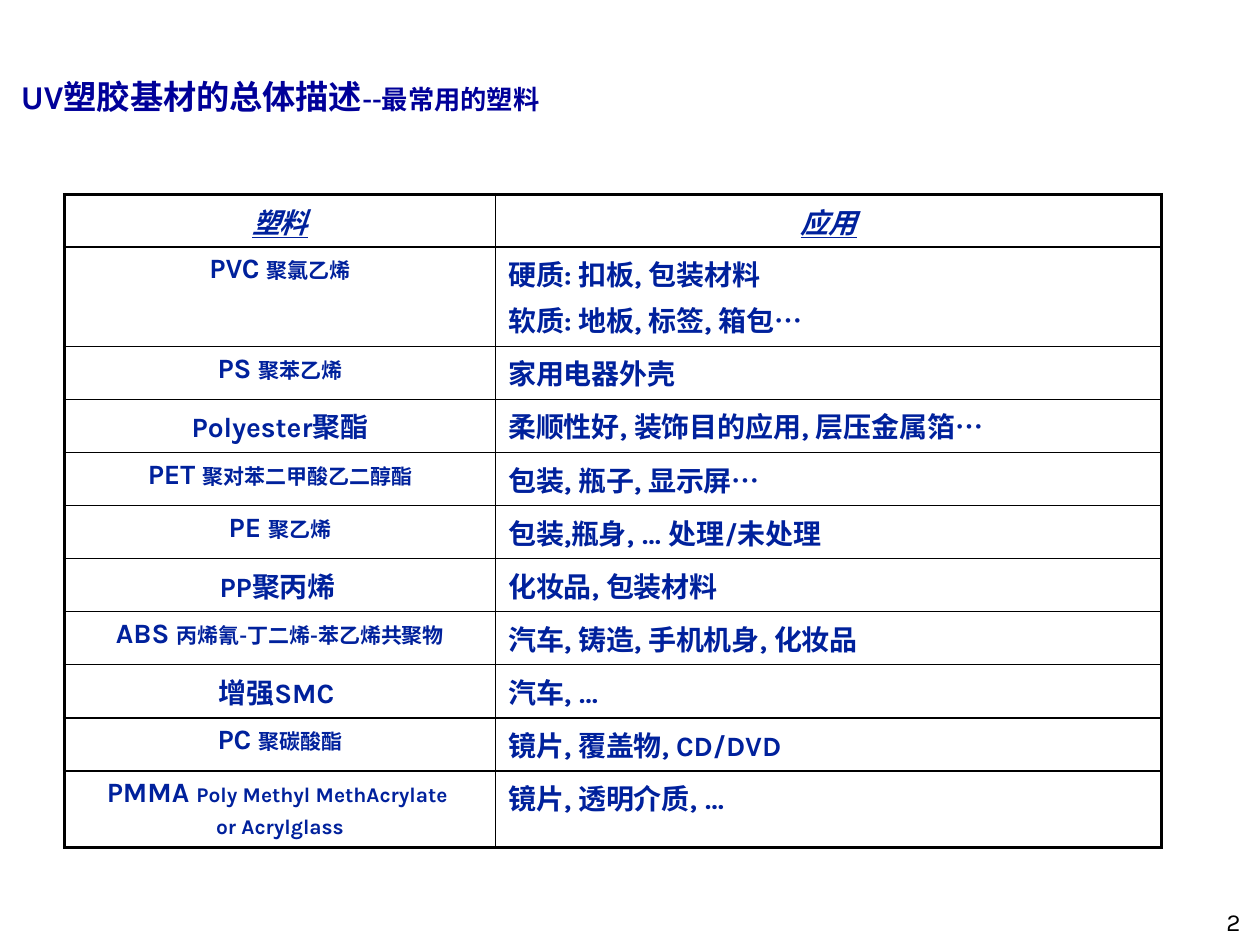
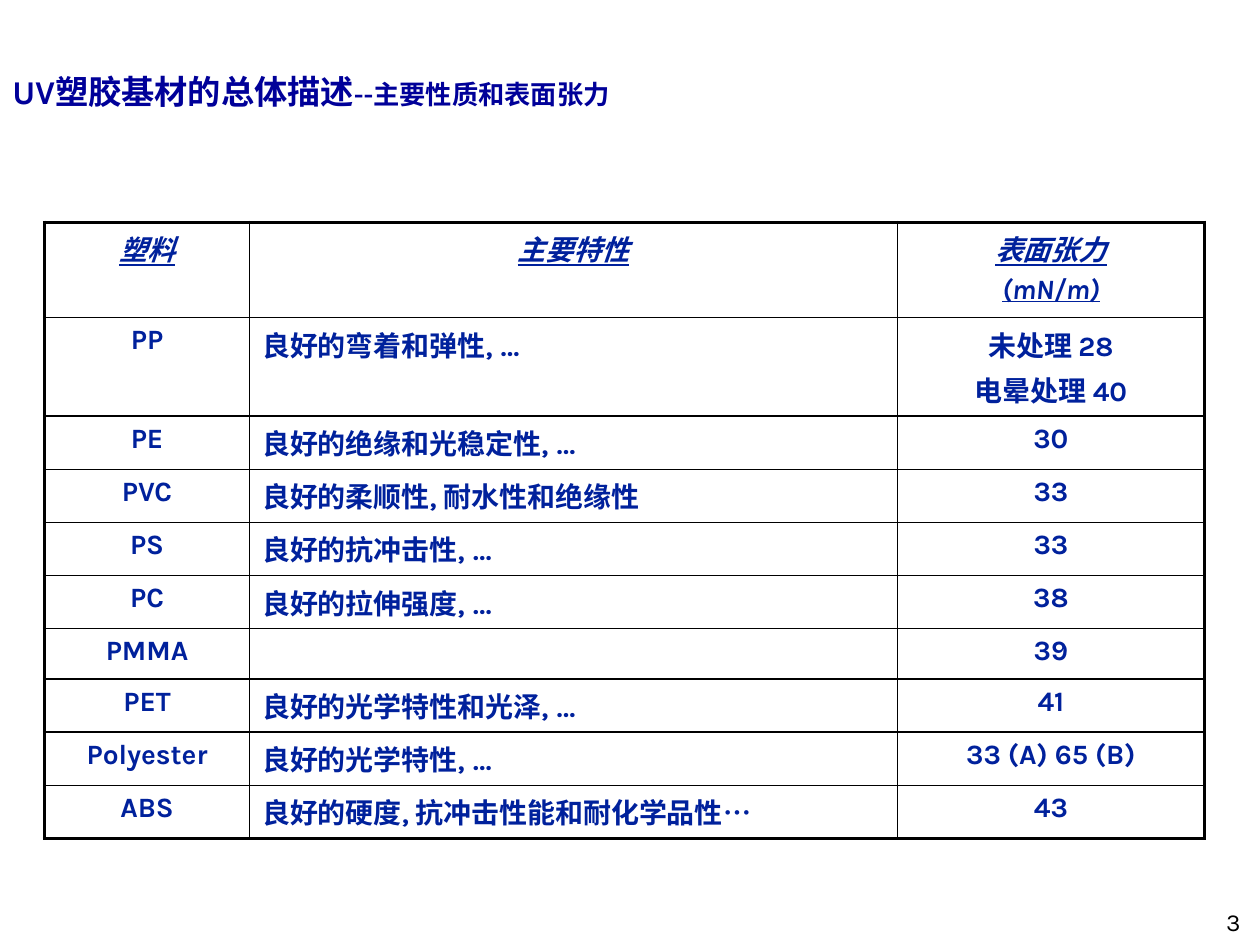
from lxml import etree
from pptx import Presentation
from pptx.dml.color import RGBColor
from pptx.enum import text
from pptx.oxml.ns import qn
from pptx.util import Cm, Pt

MAIN_FONT, DOTS_FONT = "Karla", "Roboto"
TITLE_COLOR, TABLE_COLOR, BLACK = "000099", "00219C", "000000"
INNER_LINE, OUTER_LINE = Pt(1), Pt(2.25)
BODY_SIZE, SMALL_SIZE = 16, 12
ROW_HEIGHT = 1.07
TITLE = "UV塑胶基材的总体描述"

# In a cell, "\n" starts a paragraph and "|" switches to the small size.
# "tall" holds the rows that differ from ROW_HEIGHT.
PAGES = [
    dict(
        number="2", subtitle="--最常用的塑料",
        title_height=1.63, title_indent=0.42,
        left=1.3, top=3.92, columns=[8.69, 13.43],
        special_heights={0: 1.06, 1: 2, 10: 1.54},
        rows=[
            ("塑料", "应用"),
            ("PVC |聚氯乙烯", "硬质: 扣板, 包装材料\n软质: 地板, 标签, 箱包…"),
            ("PS |聚苯乙烯", "家用电器外壳"),
            ("Polyester聚酯", "柔顺性好, 装饰目的应用, 层压金属箔…"),
            ("PET |聚对苯二甲酸乙二醇酯", "包装, 瓶子, 显示屏…"),
            ("PE |聚乙烯", "包装,瓶身, … 处理/未处理"),
            ("PP聚丙烯| ", "化妆品, 包装材料"),
            ("ABS |丙烯氰-丁二烯-苯乙烯共聚物", "汽车, 铸造, 手机机身, 化妆品"),
            ("增强SMC ", "汽车, …"),
            ("PC |聚碳酸酯", "镜片, 覆盖物, CD/DVD"),
            ("PMMA |Poly Methyl MethAcrylate \n|or Acrylglass", "镜片, 透明介质, …"),
        ],
    ),
    dict(
        number="3", subtitle="--主要性质和表面张力",
        title_height=1.42, title_indent=0.25,
        left=0.9, top=4.48, columns=[4.13, 13.06, 6.19],
        special_heights={0: 1.92, 1: 1.99, 6: 1.02},
        rows=[
            ("塑料", "主要特性", "表面张力\n(mN/m)"),
            ("PP", "良好的弯着和弹性, …", "未处理 28\n电晕处理 40"),
            ("PE", "良好的绝缘和光稳定性, …", "30"),
            ("PVC", "良好的柔顺性, 耐水性和绝缘性", "33"),
            ("PS", "良好的抗冲击性, …", "33"),
            ("PC", "良好的拉伸强度, …", "38"),
            ("PMMA", "", "39"),
            ("PET", "良好的光学特性和光泽, …", "41"),
            ("Polyester", "良好的光学特性, …", "33 (A) 65 (B)"),
            ("ABS", "良好的硬度, 抗冲击性能和耐化学品性…", "43"),
        ],
    ),
]


def color(value):
    return RGBColor.from_string(value)


def add_span(para, words, size, fill, bold=False, name=MAIN_FONT):
    span = para.add_run()
    span.text = words
    span.font.name, span.font.size, span.font.bold = name, Pt(size), bold
    span.font.color.rgb = color(fill)
    return span


def add_box(page, left, top, width, height):
    box = page.shapes.add_textbox(Cm(left), Cm(top), Cm(width), Cm(height))
    box.text_frame.word_wrap = True
    return box.text_frame


def add_title(page, content):
    frame = add_box(page, 0, 1.12, 21.59, content["title_height"])
    frame.vertical_anchor = text.MSO_ANCHOR.MIDDLE
    frame.margin_left = Cm(content["title_indent"])
    para = frame.paragraphs[0]
    add_span(para, TITLE, 19, TITLE_COLOR, bold=True)
    add_span(para, content["subtitle"], 15, TITLE_COLOR, bold=True)


def add_page_number(page, number):
    para = add_box(page, 24.17, 18.16, 1.09, 0.84).paragraphs[0]
    para.alignment = text.PP_ALIGN.RIGHT
    add_span(para, number, 14, BLACK)


def fill_cell(cell, words, heading, centred):
    frame = cell.text_frame
    for index, line in enumerate(words.split("\n")):
        para = frame.add_paragraph() if index else frame.paragraphs[0]
        if index:
            para.space_before = Pt(3)
        para.alignment = text.PP_ALIGN.CENTER if centred else text.PP_ALIGN.LEFT
        body, _, small = line.partition("|")
        for size, part in ((BODY_SIZE, body), (SMALL_SIZE, small)):
            before, dots, after = part.partition("…")
            for piece, name in ((before, MAIN_FONT), (dots, DOTS_FONT), (after, MAIN_FONT)):
                if piece:
                    span = add_span(para, piece, size, TABLE_COLOR, True, name)
                    span.font.italic = span.font.underline = heading


def set_borders(cell, outer_sides):
    """Draw all four sides, thicker where the side is on the table's edge."""
    cell.fill.background()
    properties = cell._tc.get_or_add_tcPr()
    for index, side in enumerate("LRTB"):
        width = OUTER_LINE if side in outer_sides else INNER_LINE
        line = etree.Element(qn("a:ln" + side), w=str(int(width)))
        fill = etree.SubElement(line, qn("a:solidFill"))
        etree.SubElement(fill, qn("a:srgbClr"), val=BLACK)
        properties.insert(index, line)


def add_plastics_table(page, content):
    rows, columns = content["rows"], content["columns"]
    heights = [content["special_heights"].get(r, ROW_HEIGHT) for r in range(len(rows))]
    table = page.shapes.add_table(
        len(rows), len(columns), Cm(content["left"]), Cm(content["top"]),
        Cm(sum(columns)), Cm(sum(heights))).table
    table.first_row = table.horz_banding = False
    for column, width in zip(table.columns, columns):
        column.width = Cm(width)
    for r, (row, height) in enumerate(zip(rows, heights)):
        table.rows[r].height = Cm(height)
        for c, words in enumerate(row):
            cell = table.cell(r, c)
            fill_cell(cell, words, heading=r == 0, centred=r == 0 or c != 1)
            edges = {"L": c == 0, "R": c == len(columns) - 1,
                     "T": r == 0, "B": r == len(rows) - 1}
            set_borders(cell, [side for side, outer in edges.items() if outer])


def main():
    deck = Presentation()
    deck.slide_width, deck.slide_height = Cm(25.4), Cm(19.05)
    for content in PAGES:
        page = deck.slides.add_slide(deck.slide_layouts[6])
        add_page_number(page, content["number"])
        add_title(page, content)
        add_plastics_table(page, content)
    deck.save("out.pptx")


if __name__ == "__main__":
    main()
